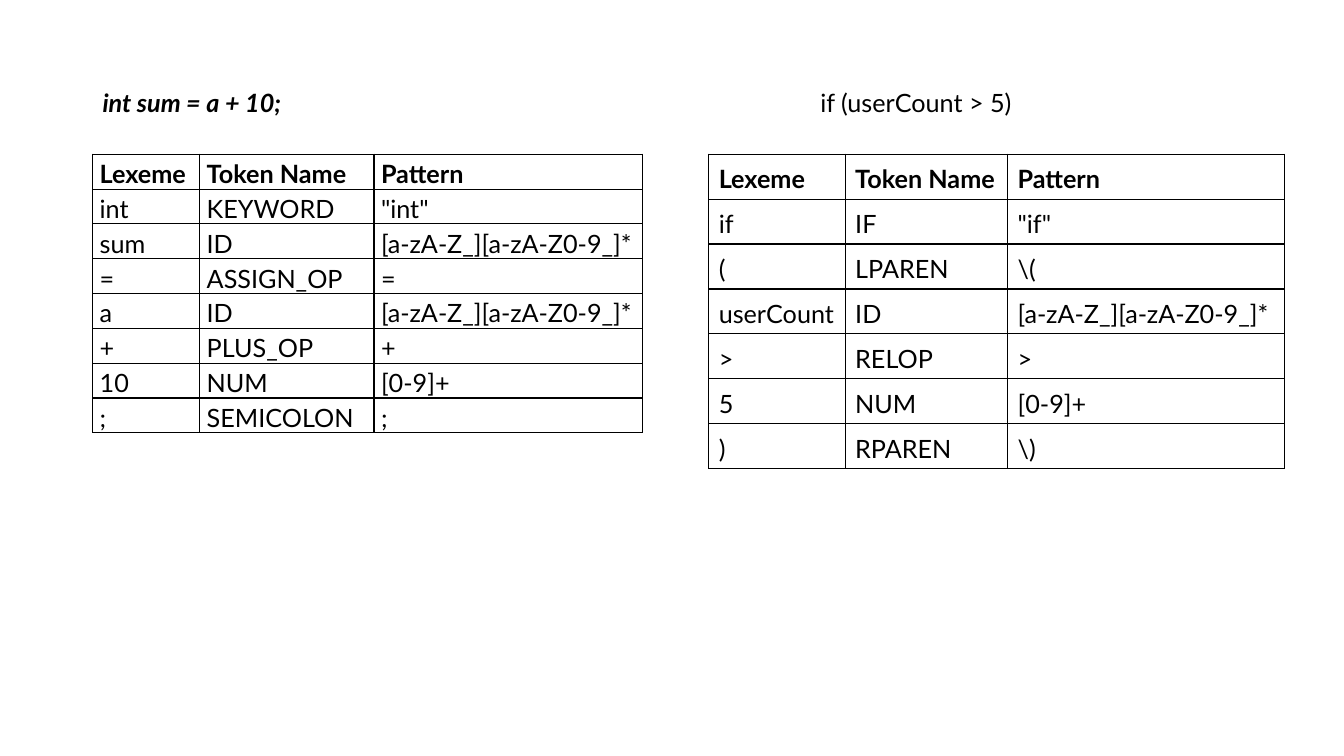
"""Build a slide that lists the tokens of two short code lines."""
from dataclasses import dataclass

from lxml.etree import SubElement as Sub
from pptx import Presentation as Deck
from pptx.dml.color import RGBColor as Rgb
from pptx.enum.text import MSO_ANCHOR as Anchor, MSO_AUTO_SIZE as Fit, PP_ALIGN as Align
from pptx.oxml.ns import qn
from pptx.util import Pt


@dataclass(frozen=True)
class Theme:
    """Hold the look shared by all parts."""
    font: str = "Lato"
    size: int = 18
    ink: str = "000000"
    line: int = 1
    lead: float = 1.15
    after: int = 8
    tab: float = 77.76


@dataclass(frozen=True)
class Grid:
    """Describe the measures of one token table."""
    cols: tuple
    row: float
    pad: tuple
    anchor: Anchor


LOOK = Theme()
HEAD = ("Lexeme", "Token Name", "Pattern")
NAME = "[a-zA-Z_][a-zA-Z0-9_]*"
SUM = (
    ("int", "KEYWORD", '"int"'),
    ("sum", "ID", NAME),
    ("=", "ASSIGN_OP", "="),
    ("a", "ID", NAME),
    ("+", "PLUS_OP", "+"),
    ("10", "NUM", "[0-9]+"),
    (";", "SEMICOLON", ";"),
)
TEST = (
    ("if", "IF", '"if"'),
    ("(", "LPAREN", r"\("),
    ("userCount", "ID", NAME),
    (">", "RELOP", ">"),
    ("5", "NUM", "[0-9]+"),
    (")", "RPAREN", r"\)"),
)
TIGHT = Grid((76.5, 124.5, 191.5), 23.58, (5, 0), Anchor.TOP)
LOOSE = Grid((97.5, 116, 198), 30.86, (7.2, 3.6), Anchor.MIDDLE)


def write(para, text, bold=False, slant=False):
    """Add one styled run to a paragraph."""
    run = para.add_run()
    run.text = text
    font = run.font
    font.name, font.size = LOOK.font, Pt(LOOK.size)
    font.bold, font.italic = bold, slant
    font.color.rgb = Rgb.from_string(LOOK.ink)


def frame(cell):
    """Draw the four borders of a cell and clear its fill."""
    props = cell._tc.get_or_add_tcPr()
    for side in "LRTB":
        edge = Sub(props, qn(f"a:ln{side}"), w=str(Pt(LOOK.line)))
        Sub(Sub(edge, qn("a:solidFill")), qn("a:srgbClr"), val=LOOK.ink)
    cell.fill.background()


def entry(cell, text, grid, bold):
    """Fill one table cell."""
    frame(cell)
    wide, high = grid.pad
    cell.margin_left = cell.margin_right = Pt(wide)
    cell.margin_top = cell.margin_bottom = Pt(high)
    cell.vertical_anchor = grid.anchor
    para = cell.text_frame.paragraphs[0]
    tabs = Sub(para._p.get_or_add_pPr(), qn("a:tabLst"))
    Sub(tabs, qn("a:tab"), pos=str(Pt(LOOK.tab)), algn="l")
    para.alignment = Align.JUSTIFY
    para.line_spacing, para.space_after = LOOK.lead, Pt(LOOK.after)
    write(para, text, bold)


def chart(slide, left, top, grid, rows):
    """Place a token table under its header row."""
    rows = (HEAD, *rows)
    shape = slide.shapes.add_table(len(rows), len(HEAD), Pt(left), Pt(top),
                                   Pt(sum(grid.cols)), Pt(grid.row * len(rows)))
    table = shape.table
    table.first_row = table.horz_banding = False
    for col, width in zip(table.columns, grid.cols):
        col.width = Pt(width)
    for i, row in enumerate(rows):
        table.rows[i].height = Pt(grid.row)
        for j, text in enumerate(row):
            entry(table.cell(i, j), text, grid, i == 0)


def label(slide, left, top, width, text, strong):
    """Place the code line that a table explains."""
    box = slide.shapes.add_textbox(Pt(left), Pt(top), Pt(width), Pt(29)).text_frame
    box.word_wrap, box.auto_size = True, Fit.SHAPE_TO_FIT_TEXT
    write(box.paragraphs[0], text, strong, strong)


def panel(slide, left, top, code, shift, width, strong, grid, rows):
    """Place a code line and its token table."""
    label(slide, left + shift, top, width, code, strong)
    chart(slide, left, top + 51.2, grid, rows)


def main():
    """Build and save the deck."""
    deck = Deck()
    deck.slide_width, deck.slide_height = Pt(960), Pt(540)
    slide = deck.slides.add_slide(deck.slide_layouts[6])
    panel(slide, 66.2, 59, "int sum = a + 10;", 0, 480, True, TIGHT, SUM)
    panel(slide, 506.2, 59, "if (userCount > 5)", 72.7, 152, False, LOOSE, TEST)
    deck.save("out.pptx")


if __name__ == "__main__":
    main()
